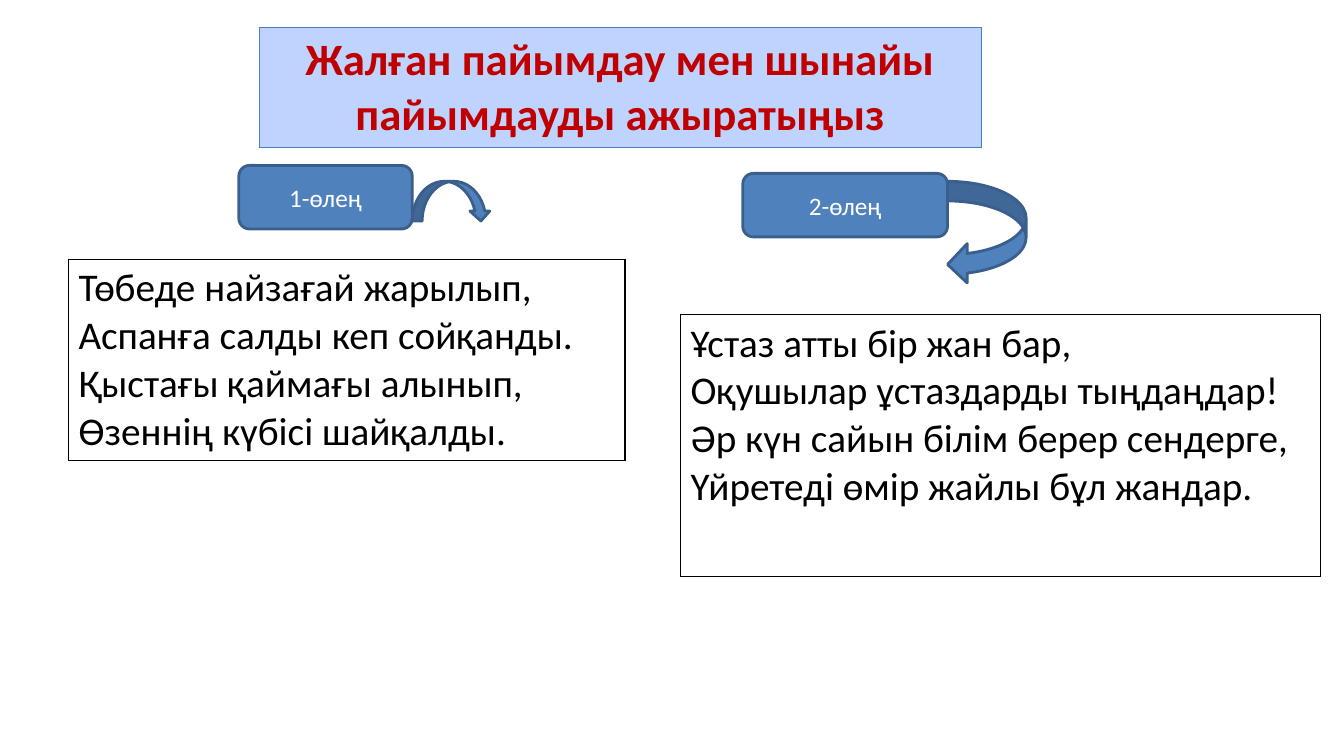
from lxml import etree
from pptx import Presentation
from pptx.dml.color import RGBColor
from pptx.enum.shapes import MSO_SHAPE
from pptx.enum.text import MSO_ANCHOR, PP_ALIGN
from pptx.oxml.ns import qn
from pptx.util import Cm, Pt

ALTERNATE_PROCESS = MSO_SHAPE.FLOWCHART_ALTERNATE_PROCESS
ROUNDED = MSO_SHAPE.ROUNDED_RECTANGLE
ARROW_DOWN = MSO_SHAPE.CURVED_DOWN_ARROW
ARROW_LEFT = MSO_SHAPE.CURVED_LEFT_ARROW
LEFT = PP_ALIGN.LEFT
CENTER = PP_ALIGN.CENTER
MIDDLE = MSO_ANCHOR.MIDDLE

BLACK = RGBColor(0x00, 0x00, 0x00)
WHITE = RGBColor(0xFF, 0xFF, 0xFF)
RED = RGBColor(0xC0, 0x00, 0x00)
BLUE = RGBColor(0x4F, 0x81, 0xBD)
DARK_BLUE = RGBColor(0x3A, 0x5F, 0x8C)
PALE_BLUE = RGBColor(0xBF, 0xD3, 0xFF)
FRAME_BLUE = RGBColor(0x4B, 0x7E, 0xBC)

FONT = "Calibri"
TITLE = "Жалған пайымдау мен шынайы пайымдауды ажыратыңыз"
POEM_1 = [
    "Төбеде найзағай жарылып,",
    "Аспанға салды кеп сойқанды.",
    "Қыстағы қаймағы алынып,",
    "Өзеннің күбісі шайқалды.",
]
POEM_2 = [
    "Ұстаз атты бір жан бар,",
    "Оқушылар ұстаздарды тыңдаңдар!",
    "Әр күн сайын білім берер сендерге,",
    "Үйретеді өмір жайлы бұл жандар.",
]


def write_text(tf, lines, size=28, color=BLACK, bold=False, align=LEFT):
    for i, line in enumerate(lines):
        p = tf.add_paragraph() if i else tf.paragraphs[0]
        p.alignment = align
        r = p.add_run()
        r.text = line
        r.font.name = FONT
        r.font.size = Pt(size)
        r.font.bold = bold
        r.font.color.rgb = color


def set_borders(cell, color, width):
    tc_pr = cell._tc.get_or_add_tcPr()
    for i, side in enumerate(("lnL", "lnR", "lnT", "lnB")):
        ln = etree.Element(qn(f"a:{side}"), w=str(Pt(width)))
        fill = etree.SubElement(ln, qn("a:solidFill"))
        etree.SubElement(fill, qn("a:srgbClr"), val=str(color))
        tc_pr.insert(i, ln)


def add_framed_text(s, box, lines, fill=None, border=BLACK, width=1, **text_format):
    table = s.shapes.add_table(1, 1, *map(Cm, box)).table
    table.first_row = False
    table.horz_banding = False
    cell = table.cell(0, 0)
    if fill is None:
        cell.fill.background()
    else:
        cell.fill.solid()
        cell.fill.fore_color.rgb = fill
    set_borders(cell, border, width)
    write_text(cell.text_frame, lines, **text_format)


def add_blue_shape(s, kind, box, label=None):
    sp = s.shapes.add_shape(kind, *map(Cm, box))
    sp.shadow.inherit = False
    sp.fill.solid()
    sp.fill.fore_color.rgb = BLUE
    sp.line.color.rgb = DARK_BLUE
    sp.line.width = Pt(2)
    if label:
        sp.text_frame.vertical_anchor = MIDDLE
        write_text(sp.text_frame, [label], size=18, color=WHITE, align=CENTER)


def main():
    prs = Presentation()
    prs.slide_width = Cm(33.87)
    prs.slide_height = Cm(19.05)
    s = prs.slides.add_slide(prs.slide_layouts[6])

    add_framed_text(s, (6.53, 0.7, 18.2, 3.02), [TITLE], fill=PALE_BLUE,
                    border=FRAME_BLUE, width=0.75,
                    size=32, color=RED, bold=True, align=CENTER)

    add_blue_shape(s, ALTERNATE_PROCESS, (6.02, 4.17, 4.37, 1.6), "1-өлең")
    add_blue_shape(s, ARROW_DOWN, (10.39, 4.57, 1.98, 1))
    add_framed_text(s, (1.73, 6.53, 14.02, 5.06), POEM_1)

    add_blue_shape(s, ROUNDED, (18.72, 4.37, 5.16, 1.6), "2-өлең")
    add_framed_text(s, (17.15, 7.93, 16.13, 6.6), POEM_2)
    add_blue_shape(s, ARROW_LEFT, (23.88, 4.57, 1.98, 2.59))

    prs.save("out.pptx")


if __name__ == "__main__":
    main()
